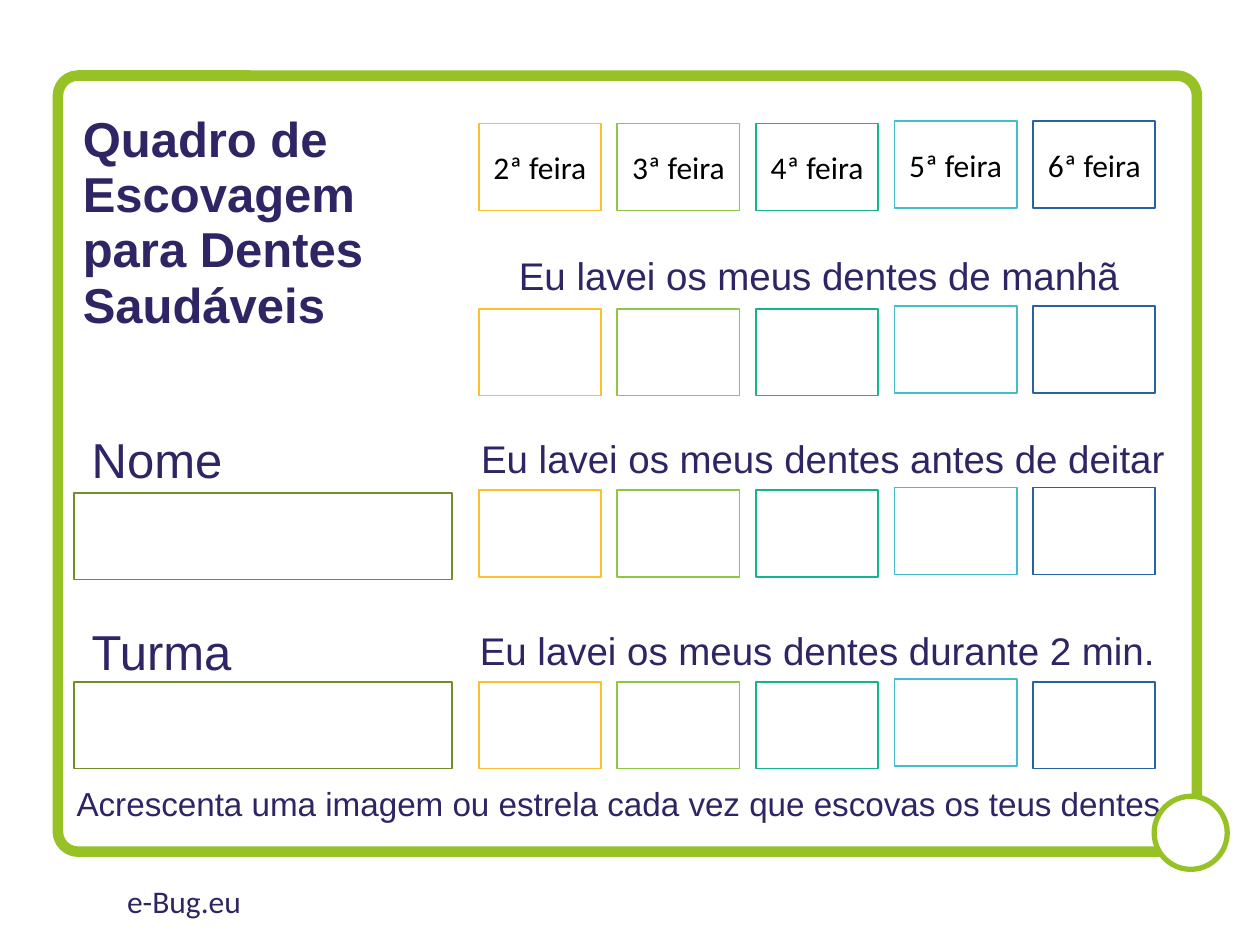
"""Build a weekly toothbrushing chart slide."""
from dataclasses import dataclass

from pptx import Presentation
from pptx.dml.color import RGBColor
from pptx.enum.shapes import MSO_SHAPE
from pptx.enum.text import MSO_ANCHOR, PP_ALIGN
from pptx.util import Inches, Pt

RECTANGLE = MSO_SHAPE.RECTANGLE
ROUNDED = MSO_SHAPE.ROUNDED_RECTANGLE
OVAL = MSO_SHAPE.OVAL
TOP = MSO_ANCHOR.TOP
MIDDLE = MSO_ANCHOR.MIDDLE
CENTER = PP_ALIGN.CENTER


@dataclass(frozen=True)
class Theme:
    ink: str = "302564"
    black: str = "000000"
    white: str = "FFFFFF"
    frame: str = "96C225"
    field: str = "708F2B"
    heading_font: str = "Arial"
    body_font: str = "Calibri"
    large: int = 28
    medium: int = 22
    note: int = 19
    small: int = 18


@dataclass(frozen=True)
class Box:
    left: float
    top: float
    width: float
    height: float


@dataclass(frozen=True)
class Label:
    text: str
    box: Box
    size: int
    font: str
    bold: bool = False
    anchor: MSO_ANCHOR = TOP
    line_spacing: float = 1.0


@dataclass(frozen=True)
class Day:
    name: str
    color: str


@dataclass(frozen=True)
class Row:
    top: float
    raised_days: tuple[int, ...] = (3, 4)


THEME = Theme()
GRID_LEFT, COLUMN_STEP, RAISE = 3.8, 1.1, 0.02
CELL_WIDTH, CELL_HEIGHT = 0.97, 0.69

DAYS = (
    Day("2ª feira", "FBC02B"),
    Day("3ª feira", "8EC742"),
    Day("4ª feira", "13B48E"),
    Day("5ª feira", "46BCC9"),
    Day("6ª feira", "2862A4"),
)
ROWS = (Row(0.98), Row(2.45), Row(3.89), Row(5.41, (3,)))
FIELDS = tuple(Box(0.59, top, 3, CELL_HEIGHT) for top in (3.91, 5.41))

LABELS = (
    Label("Quadro de Escovagem \vpara Dentes Saudáveis", Box(0.56, 1.05, 3.57, 1.45),
          THEME.large, THEME.heading_font, True, MIDDLE, 0.94),
    Label("Nome", Box(0.63, 3.36, 1.43, 0.57), THEME.large, THEME.heading_font),
    Label("Turma", Box(0.63, 4.88, 1.43, 0.57), THEME.large, THEME.heading_font),
    Label("Eu lavei os meus dentes de manhã", Box(4.02, 1.95, 5.5, 0.47),
          THEME.medium, THEME.heading_font),
    Label("Eu lavei os meus dentes antes de deitar", Box(3.72, 3.4, 5.67, 0.47),
          THEME.medium, THEME.heading_font),
    Label("Eu lavei os meus dentes durante 2 min.", Box(3.71, 4.93, 5.79, 0.47),
          THEME.medium, THEME.heading_font),
    Label("Acrescenta uma imagem ou estrela cada vez que escovas os teus dentes",
          Box(0.51, 6.17, 9.4, 0.42), THEME.note, THEME.heading_font),
    Label("e-Bug.eu", Box(0.91, 6.95, 3.38, 0.4), THEME.small, THEME.body_font),
)


def place(box: Box) -> tuple:
    return Inches(box.left), Inches(box.top), Inches(box.width), Inches(box.height)


def style_font(font, name: str, size: int, color: str, bold: bool = False) -> None:
    font.name = name
    font.size = Pt(size)
    font.bold = bold
    font.color.rgb = RGBColor.from_string(color)


def add_label(slide, label: Label) -> None:
    text_frame = slide.shapes.add_textbox(*place(label.box)).text_frame
    text_frame.word_wrap = True
    text_frame.vertical_anchor = label.anchor
    text_frame.text = label.text
    paragraph = text_frame.paragraphs[0]
    paragraph.line_spacing = label.line_spacing
    for run in paragraph.runs:
        style_font(run.font, label.font, label.size, THEME.ink, label.bold)


def add_outline(slide, kind: MSO_SHAPE, box: Box, color: str, weight: float = 1):
    shape = slide.shapes.add_shape(kind, *place(box))
    shape.shadow.inherit = False
    shape.fill.background()
    shape.line.color.rgb = RGBColor.from_string(color)
    shape.line.width = Pt(weight)
    return shape


def add_day_name(shape, name: str) -> None:
    text_frame = shape.text_frame
    text_frame.vertical_anchor = MIDDLE
    text_frame.text = name
    paragraph = text_frame.paragraphs[0]
    paragraph.alignment = CENTER
    style_font(paragraph.runs[0].font, THEME.body_font, THEME.small, THEME.black)


def add_grid(slide) -> None:
    for row_index, row in enumerate(ROWS):
        for column, day in enumerate(DAYS):
            top = row.top - RAISE * (column in row.raised_days)
            box = Box(GRID_LEFT + column * COLUMN_STEP, top, CELL_WIDTH, CELL_HEIGHT)
            cell = add_outline(slide, RECTANGLE, box, day.color)
            if row_index == 0:
                add_day_name(cell, day.name)


def add_frame(slide) -> None:
    frame = add_outline(slide, ROUNDED, Box(0.46, 0.6, 9.04, 6.16), THEME.frame, 6)
    frame.adjustments[0] = 0.026
    badge = add_outline(slide, OVAL, Box(9.16, 6.32, 0.58, 0.58), THEME.frame, 3)
    badge.fill.solid()
    badge.fill.fore_color.rgb = RGBColor.from_string(THEME.white)


def main() -> None:
    presentation = Presentation()
    presentation.slide_width = Inches(10)
    presentation.slide_height = Inches(7.5)
    slide = presentation.slides.add_slide(presentation.slide_layouts[6])
    for label in LABELS:
        add_label(slide, label)
    add_grid(slide)
    for field in FIELDS:
        add_outline(slide, RECTANGLE, field, THEME.field)
    add_frame(slide)
    presentation.save("out.pptx")


if __name__ == "__main__":
    main()
